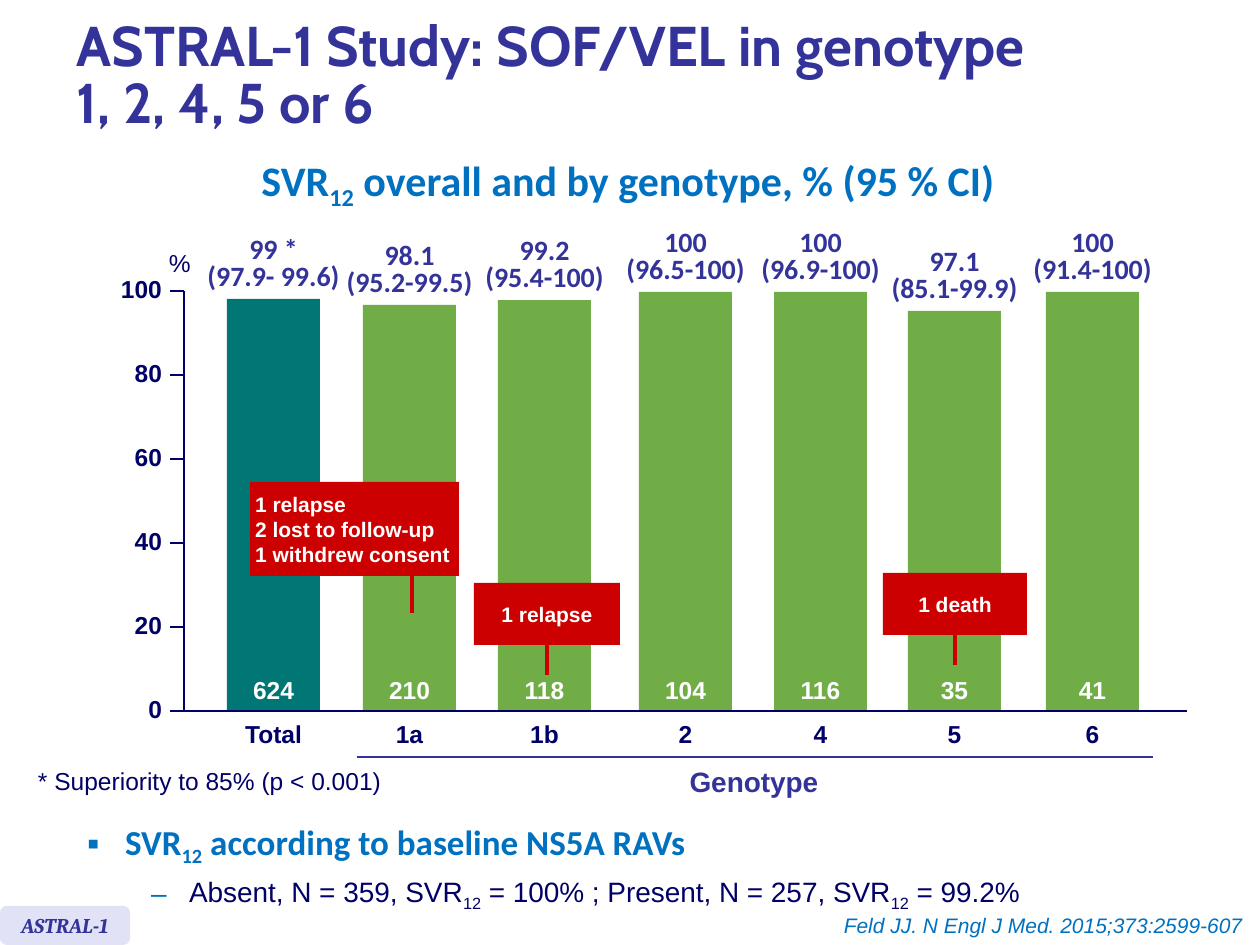
"""Build the ASTRAL-1 slide: SVR12 overall and by genotype, with baseline RAV results."""
from lxml.etree import SubElement
from pptx import Presentation
from pptx.dml.color import RGBColor
from pptx.enum.shapes import MSO_CONNECTOR as CONN, MSO_SHAPE as SHAPE
from pptx.enum.text import MSO_ANCHOR as ANCHOR, MSO_AUTO_SIZE as AUTO, PP_ALIGN as AL
from pptx.oxml.ns import qn
from pptx.util import Inches, Pt

PX = 7257
NAVY = RGBColor(0x00, 0x00, 0x66)
INDIGO = RGBColor(0x33, 0x33, 0x99)
BLUE = RGBColor(0x00, 0x70, 0xC0)
TEAL = RGBColor(0x00, 0x77, 0x74)
GREEN = RGBColor(0x70, 0xAD, 0x47)
RED = RGBColor(0xCC, 0x00, 0x00)
LILAC = RGBColor(0xE2, 0xE2, 0xF6)
WHITE = RGBColor(0xFF, 0xFF, 0xFF)

prs = Presentation()
prs.slide_width, prs.slide_height = Inches(10), Inches(7.5)
s = prs.slides.add_slide(prs.slide_layouts[1])


def box(x, y, w, h, kind=None, fill=None):
    """Add a text box, or a filled shape of the given kind, placed in px."""
    at = [v * PX for v in (x, y, w, h)]
    if kind is None:
        return s.shapes.add_textbox(*at)
    sp = s.shapes.add_shape(kind, *at)
    sp.shadow.inherit = False
    sp.fill.solid()
    sp.fill.fore_color.rgb = fill
    sp.line.fill.background()
    return sp


def write(sp, text, size=14, color=NAVY, font="Arial", bold=False, italic=False, align=AL.LEFT,
          spacing=None, inset=(13, 6), anchor=ANCHOR.TOP, wrap=True):
    """Write text into a shape; newlines part paragraphs, underscores enclose subscripts."""
    tf = sp.text_frame
    tf.word_wrap, tf.auto_size, tf.vertical_anchor = wrap, AUTO.NONE, anchor
    tf.margin_left = tf.margin_right = inset[0] * PX
    tf.margin_top = tf.margin_bottom = inset[1] * PX
    for i, row in enumerate(text.split("\n")):
        p = tf.add_paragraph() if i else tf.paragraphs[0]
        p.alignment, p.line_spacing = align, spacing
        for j, part in enumerate(row.split("_")):
            r = p.add_run()
            r.text = part
            f = r.font
            f.name, f.size, f.bold, f.italic = font, Pt(size), bold, italic
            f.color.rgb = color
            if j % 2:
                r._r.get_or_add_rPr().set("baseline", "-25000")


title, body = s.placeholders
for sp, at in ((title, (64, 10, 1150, 135)), (body, (74, 814, 1150, 105))):
    sp.left, sp.top, sp.width, sp.height = [v * PX for v in at]

write(title, "ASTRAL-1 Study: SOF/VEL in genotype\n1, 2, 4, 5 or 6", size=32, color=INDIGO,
      font="Cabin", bold=True, spacing=0.85, anchor=ANCHOR.MIDDLE)
write(box(242, 179, 772, 44), "SVR_12_ overall and by genotype, % (95 % CI)", size=24,
      color=BLUE, font="Calibri", bold=True, align=AL.CENTER, spacing=Pt(15.2))

write(body, "SVR_12_ according to baseline NS5A RAVs\n"
      "Absent, N = 359, SVR_12_ = 100% ; Present, N = 257, SVR_12_ = 99.2%", size=16)
heading, detail = body.text_frame.paragraphs
detail.level = 1
for p, bullet, margin, before in ((heading, "▪", 38, 0), (detail, "–", 102, 4)):
    pPr = p._p.get_or_add_pPr()
    pPr.set("marL", str(margin * PX))
    pPr.set("indent", str(-38 * PX))
    SubElement(SubElement(pPr, qn("a:buClr")), qn("a:srgbClr")).set("val", str(BLUE))
    SubElement(pPr, qn("a:buChar")).set("char", bullet)
    p.space_before = Pt(before)
for r in heading.runs:
    r.font.name, r.font.size, r.font.bold = "Calibri", Pt(20), True
    r.font.color.rgb = BLUE

BASE, BAR_W = 711, 93
lines = [(184, 291, 184, BASE, NAVY, 1.5, None),
         (184, BASE, 1187, BASE, NAVY, 1.5, None),
         (357, 757, 1153, 757, INDIGO, 1.5, None)]
for value in range(0, 101, 20):
    y = BASE - value * 84 // 20
    lines.append((170, y, 184, y, NAVY, 1.5, None))
    write(box(111, y - 17, 51, 30), str(value), bold=True, align=AL.RIGHT, inset=(0, 0))

bars = [("Total", 227, 299, "99 *\n(97.9- 99.6)", "624"),
        ("1a", 363, 305, "98.1\n(95.2-99.5)", "210"),
        ("1b", 498, 300, "99.2\n(95.4-100)", "118"),
        ("2", 639, 292, "100\n(96.5-100)", "104"),
        ("4", 774, 292, "100\n(96.9-100)", "116"),
        ("5", 908, 311, "97.1\n(85.1-99.9)", "35"),
        ("6", 1046, 292, "100\n(91.4-100)", "41")]
for name, x, top, rate, count in bars:
    box(x, top, BAR_W, BASE - top, SHAPE.RECTANGLE, TEAL if name == "Total" else GREEN)
    write(box(x - 25, top - 60, BAR_W + 50, 56), rate, size=16, color=INDIGO, font="Calibri",
          bold=True, align=AL.CENTER, spacing=Pt(15.2), inset=(0, 0))
    for y, text, color in ((675, count, WHITE), (719, name, NAVY)):
        write(box(x, y, BAR_W, 30), text, color=color, bold=True, align=AL.CENTER, inset=(0, 0))

callouts = [(250, 482, 209, 94, "1 relapse\n2 lost to follow-up\n1 withdrew consent", AL.LEFT, 412, 613),
            (474, 583, 146, 62, "1 relapse", AL.CENTER, 547, 675),
            (883, 573, 144, 62, "1 death", AL.CENTER, 955, 665)]
for x, y, w, h, text, align, stem, end in callouts:
    sp = box(x, y, w, h, SHAPE.RECTANGLE, RED)
    write(sp, text, size=12, color=WHITE, bold=True, align=align, inset=(5, 13),
          anchor=ANCHOR.MIDDLE, wrap=False)
    lines.append((stem, y + h, stem, end, RED, 2.25, sp if stem == x + w // 2 else None))

for x1, y1, x2, y2, color, width, start in lines:
    c = s.shapes.add_connector(CONN.STRAIGHT, x1 * PX, y1 * PX, x2 * PX, y2 * PX)
    c.line.color.rgb, c.line.width = color, Pt(width)
    SubElement(c._element.spPr, qn("a:effectLst"))
    if start is not None:
        c.begin_connect(start, 2)

write(box(156, 242, 48, 43), "%", wrap=False)
write(box(679, 765, 150, 34), "Genotype", size=16, color=INDIGO, bold=True, align=AL.CENTER,
      inset=(0, 0))
write(box(25, 760, 370, 43), "* Superiority to 85% (p < 0.001)", wrap=False)

tag = box(0, 906, 130, 39, SHAPE.ROUNDED_RECTANGLE, LILAC)
tag.adjustments[0] = 0.17
write(tag, "ASTRAL-1", size=12, color=INDIGO, font="Cambria", bold=True, italic=True,
      align=AL.CENTER, anchor=ANCHOR.MIDDLE, wrap=False)
write(box(823, 907, 433, 38), "Feld JJ. N Engl J Med. 2015;373:2599-607", size=12, color=BLUE,
      italic=True, align=AL.RIGHT)

prs.save("out.pptx")
